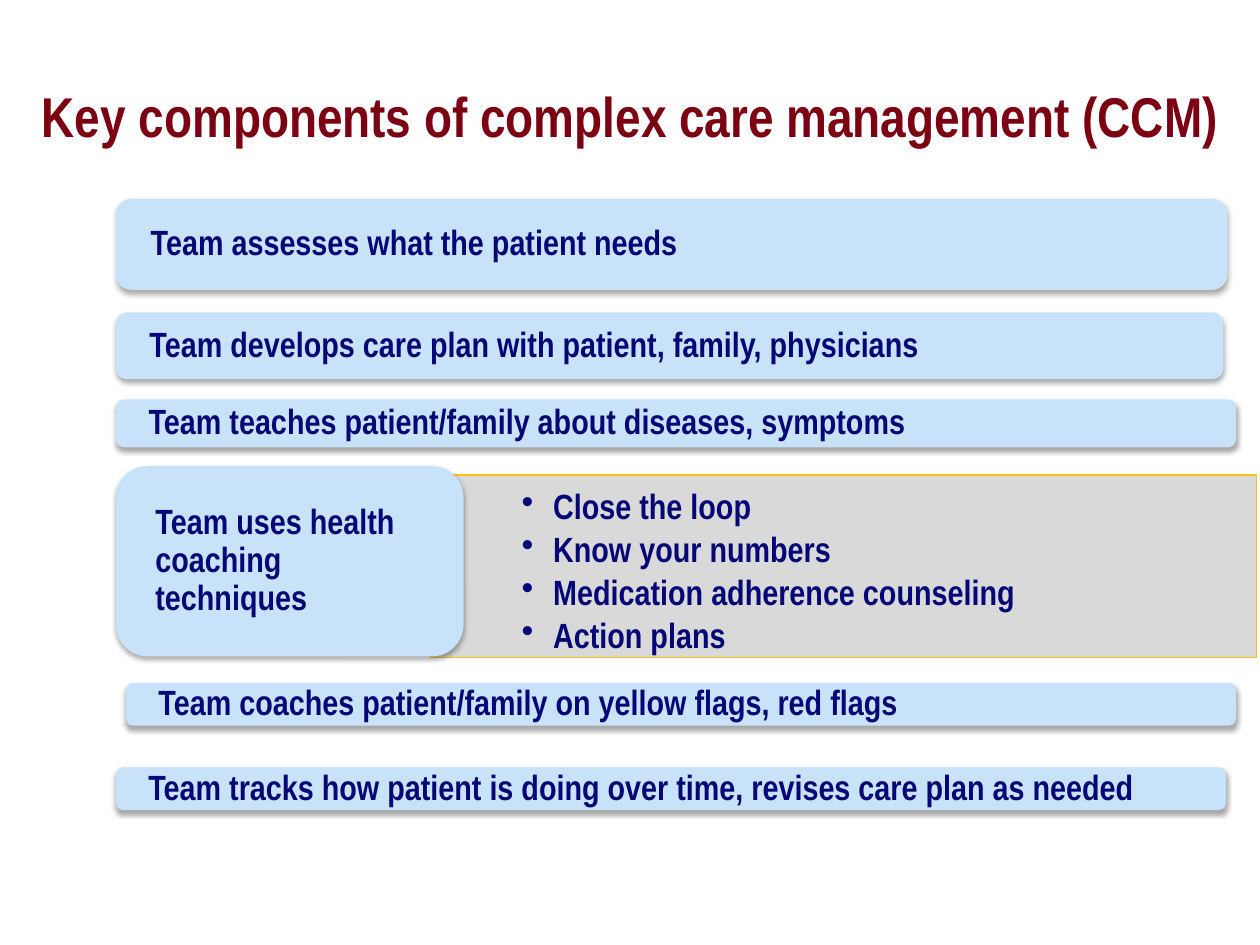
from dataclasses import dataclass

from lxml import etree
from pptx import Presentation
from pptx.dml.color import RGBColor
from pptx.enum.shapes import MSO_SHAPE
from pptx.enum.text import MSO_ANCHOR, PP_ALIGN
from pptx.oxml.ns import qn
from pptx.util import Inches, Pt


@dataclass(frozen=True)
class Theme:
    font: str = "Arial Narrow"
    title_size: int = 32
    body_size: int = 20
    title_color: str = "7B0011"
    text_color: str = "050777"
    card_fill: str = "C8E2FA"
    panel_fill: str = "D9D9D9"
    panel_line: str = "FBC01E"
    shadow: str = "000000"


class SlideBuilder:
    def __init__(self, slide, theme):
        self.slide = slide
        self.theme = theme

    def style(self, paragraph, size, color):
        paragraph.font.name = self.theme.font
        paragraph.font.size = Pt(size)
        paragraph.font.bold = True
        paragraph.font.color.rgb = RGBColor.from_string(color)

    def set_frame(self, frame, anchor, margins):
        frame.word_wrap = True
        frame.vertical_anchor = anchor
        (frame.margin_left, frame.margin_top,
         frame.margin_right, frame.margin_bottom) = map(Inches, margins)

    def add_box(self, preset, box, fill):
        shape = self.slide.shapes.add_shape(preset, *map(Inches, box))
        shape.shadow.inherit = False
        shape.fill.solid()
        shape.fill.fore_color.rgb = RGBColor.from_string(fill)
        return shape

    def add_soft_shadow(self, shape):
        effects = shape._element.spPr.find(qn("a:effectLst"))
        shadow = etree.SubElement(
            effects, qn("a:outerShdw"), blurRad=str(Pt(3.1)), dist=str(Pt(1.8)),
            dir="5400000", algn="ctr", rotWithShape="0")
        color = etree.SubElement(shadow, qn("a:srgbClr"), val=self.theme.shadow)
        etree.SubElement(color, qn("a:alpha"), val="35000")

    def add_title(self, text, box):
        shape = self.slide.shapes.add_textbox(*map(Inches, box))
        self.set_frame(shape.text_frame, MSO_ANCHOR.MIDDLE, (0.1, 0.05, 0.1, 0.05))
        paragraph = shape.text_frame.paragraphs[0]
        paragraph.text = text
        paragraph.alignment = PP_ALIGN.CENTER
        self.style(paragraph, self.theme.title_size, self.theme.title_color)

    def add_card(self, text, box):
        shape = self.add_box(MSO_SHAPE.ROUNDED_RECTANGLE, box, self.theme.card_fill)
        shape.line.fill.background()
        self.add_soft_shadow(shape)
        self.set_frame(shape.text_frame, MSO_ANCHOR.MIDDLE, (0.24, 0, 0.24, 0))
        paragraph = shape.text_frame.paragraphs[0]
        paragraph.text = text
        paragraph.alignment = PP_ALIGN.LEFT
        paragraph.line_spacing = 0.9
        self.style(paragraph, self.theme.body_size, self.theme.text_color)

    def add_bullet_panel(self, items, box):
        shape = self.add_box(MSO_SHAPE.RECTANGLE, box, self.theme.panel_fill)
        shape.line.color.rgb = RGBColor.from_string(self.theme.panel_line)
        shape.line.width = Pt(0.75)
        frame = shape.text_frame
        self.set_frame(frame, MSO_ANCHOR.TOP, (0.72, 0.11, 0.72, 0.16))
        frame.text = "\n".join(items)
        for paragraph in frame.paragraphs:
            paragraph.level = 1
            paragraph.alignment = PP_ALIGN.LEFT
            paragraph.line_spacing = 0.9
            paragraph.space_after = Pt(3)
            self.style(paragraph, self.theme.body_size, self.theme.text_color)
            self.add_bullet(paragraph)

    def add_bullet(self, paragraph):
        properties = paragraph._p.get_or_add_pPr()
        properties.set("marL", str(Inches(0.25)))
        properties.set("indent", str(-Inches(0.25)))
        bullet = etree.Element(qn("a:buChar"), char="•")
        properties.find(qn("a:defRPr")).addprevious(bullet)


CARDS = [
    ("Team assesses what the patient needs", (0.92, 1.58, 8.82, 0.72)),
    ("Team develops care plan with patient, family, physicians", (0.92, 2.48, 8.79, 0.53)),
    ("Team teaches patient/family about diseases, symptoms", (0.92, 3.17, 8.89, 0.38)),
    ("Team uses health coaching techniques", (0.92, 3.7, 2.76, 1.51)),
    ("Team coaches patient/family on yellow flags, red flags", (1, 5.42, 8.81, 0.34)),
    ("Team tracks how patient is doing over time, revises care plan as needed",
     (0.92, 6.09, 8.81, 0.34)),
]
COACHING_TECHNIQUES = [
    "Close the loop",
    "Know your numbers",
    "Medication adherence counseling",
    "Action plans",
]


def main():
    presentation = Presentation()
    presentation.slide_width = Inches(10)
    presentation.slide_height = Inches(7.5)
    slide = presentation.slides.add_slide(presentation.slide_layouts[6])
    builder = SlideBuilder(slide, Theme())

    builder.add_title("Key components of complex care management (CCM)",
                      (0.17, 0.5, 9.67, 0.83))
    builder.add_bullet_panel(COACHING_TECHNIQUES, (3.42, 3.77, 6.55, 1.45))
    for text, box in CARDS:
        builder.add_card(text, box)
    presentation.save("out.pptx")


if __name__ == "__main__":
    main()
